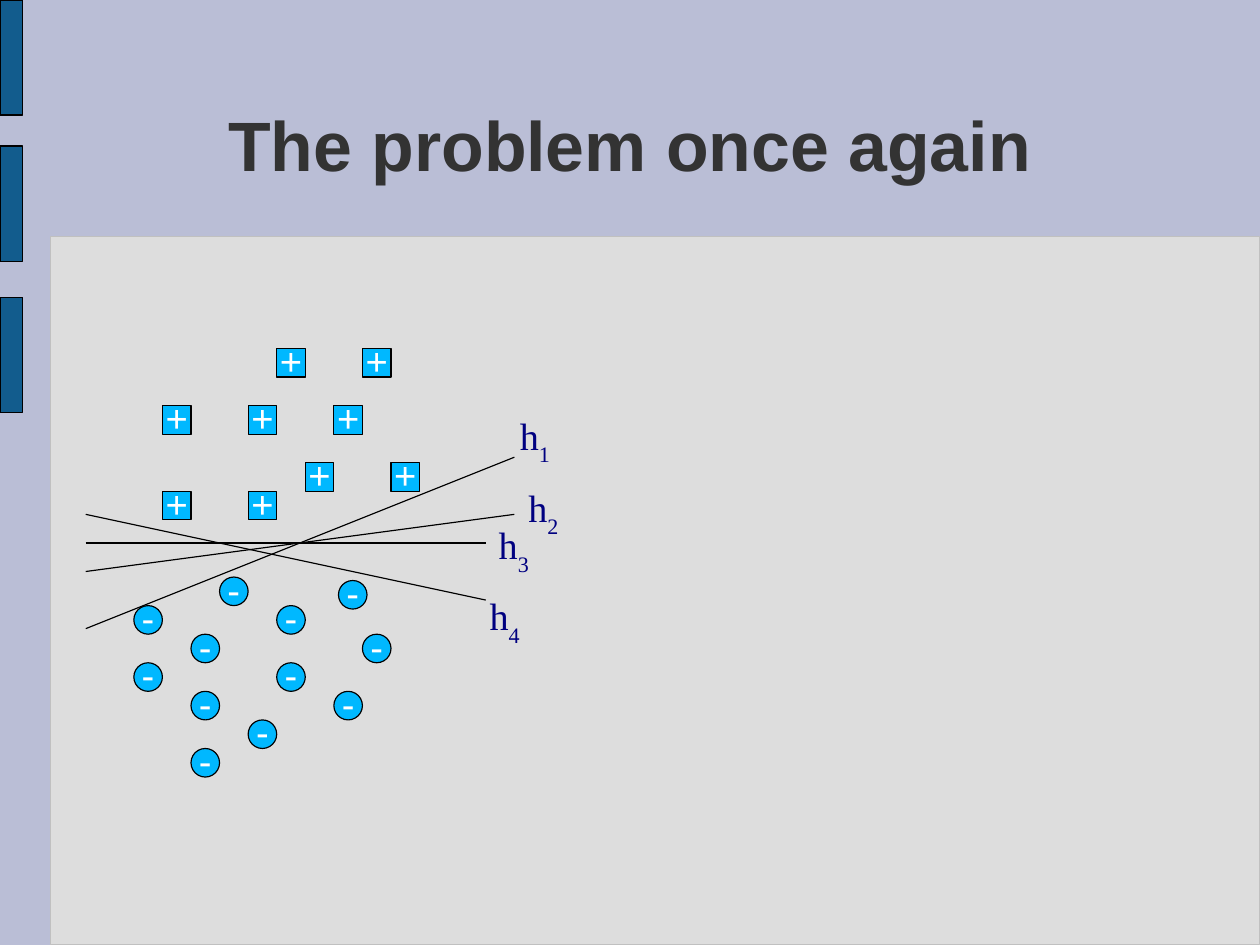
from lxml import etree
from pptx import Presentation
from pptx.dml.color import RGBColor
from pptx.enum import shapes, text
from pptx.oxml.ns import qn
from pptx.util import Pt

LAVENDER = RGBColor(0xBA, 0xBE, 0xD6)
PANEL_GREY = RGBColor(0xDD, 0xDD, 0xDD)
EDGE_GREY = RGBColor(0xC0, 0xC0, 0xC0)
BAR_BLUE = RGBColor(0x12, 0x5C, 0x8D)
SKY_BLUE = RGBColor(0x00, 0xB8, 0xFF)
NAVY = RGBColor(0x00, 0x00, 0x80)
CHARCOAL = RGBColor(0x33, 0x33, 0x33)
WHITE = RGBColor(0xFF, 0xFF, 0xFF)
BLACK = RGBColor(0, 0, 0)

RECTANGLE = shapes.MSO_SHAPE.RECTANGLE
OVAL = shapes.MSO_SHAPE.OVAL

WIDTH, HEIGHT = 793.7, 595.28
CELL = 18
GRID_LEFT, GRID_TOP = 84.3, 219.5
LINES_LEFT = 54

POSITIVES = [(5, 0), (8, 0), (1, 2), (4, 2), (7, 2),
             (6, 4), (9, 4), (1, 5), (4, 5)]
NEGATIVES = [(3, 8), (7.16, 8.12), (0, 9), (5, 9), (2, 10), (8, 10),
             (0, 11), (5, 11), (2, 12), (7, 12), (4, 13), (2, 14)]
HYPOTHESES = [
    ("1", 396, (324, 288), (317.5, 257.8, 38.9)),
    ("2", 360, (324, 324), (329, 303.1, 26.6)),
    ("3", 342, (306, 342), (306, 326.9, 35.3)),
    ("4", 324, (306, 378), (300.2, 371.5, 35.3)),
]


def add_block(slide, kind, box, fill, edge=BLACK):
    block = slide.shapes.add_shape(kind, *map(Pt, box))
    block.shadow.inherit = False
    block.fill.solid()
    block.fill.fore_color.rgb = fill
    block.line.color.rgb = edge
    block.line.width = Pt(0.75)
    return block


def write(holder, words, size, font, color, bold=False):
    frame = holder.text_frame
    frame.word_wrap = False
    frame.vertical_anchor = text.MSO_ANCHOR.MIDDLE
    frame.margin_left = frame.margin_right = 0
    frame.margin_top = frame.margin_bottom = 0
    paragraph = frame.paragraphs[0]
    paragraph.alignment = text.PP_ALIGN.CENTER
    paragraph.line_spacing = 0.93
    paragraph.font.size = Pt(size)
    paragraph.font.name = font
    paragraph.font.bold = bold
    paragraph.font.color.rgb = color
    paragraph.add_run().text = words
    return paragraph


def add_title(slide, words):
    title = slide.shapes.add_textbox(Pt(58.3), Pt(68.4), Pt(677.5), Pt(49.7))
    write(title, words, 44, "Arial", CHARCOAL, bold=True)


def add_examples(slide, kind, sign, cells):
    for column, row in cells:
        box = (GRID_LEFT + column * CELL, GRID_TOP + row * CELL, CELL, CELL)
        example = add_block(slide, kind, box, SKY_BLUE)
        write(example, sign, 24, "Arial", WHITE)


def add_hypothesis(slide, index, start_y, end, label_box):
    group = slide.shapes.add_group_shape()
    boundary = group.shapes.add_connector(
        shapes.MSO_CONNECTOR.STRAIGHT,
        Pt(LINES_LEFT), Pt(start_y), *map(Pt, end))
    boundary.line.color.rgb = BLACK
    boundary.line.width = Pt(0.75)
    etree.SubElement(boundary._element.spPr, qn("a:effectLst"))

    left, top, width = label_box
    label = group.shapes.add_textbox(Pt(left), Pt(top), Pt(width), Pt(36))
    paragraph = write(label, "h", 24, "Times New Roman", NAVY)
    subscript = paragraph.add_run()
    subscript.text = index
    subscript.font._element.set("baseline", "-33000")


def main():
    deck = Presentation()
    deck.slide_width, deck.slide_height = Pt(WIDTH), Pt(HEIGHT)
    slide = deck.slides.add_slide(deck.slide_layouts[6])
    slide.background.fill.solid()
    slide.background.fill.fore_color.rgb = LAVENDER

    panel = (31.7, 149, WIDTH - 31.7, HEIGHT - 149)
    add_block(slide, RECTANGLE, panel, PANEL_GREY, EDGE_GREY)
    for top in (0, 92, 187.2):
        add_block(slide, RECTANGLE, (0, top, 14.4, 72.5), BAR_BLUE)

    add_title(slide, "The problem once again")
    add_examples(slide, RECTANGLE, "+", POSITIVES)
    add_examples(slide, OVAL, "-", NEGATIVES)
    for hypothesis in HYPOTHESES:
        add_hypothesis(slide, *hypothesis)

    deck.save("out.pptx")


if __name__ == "__main__":
    main()
